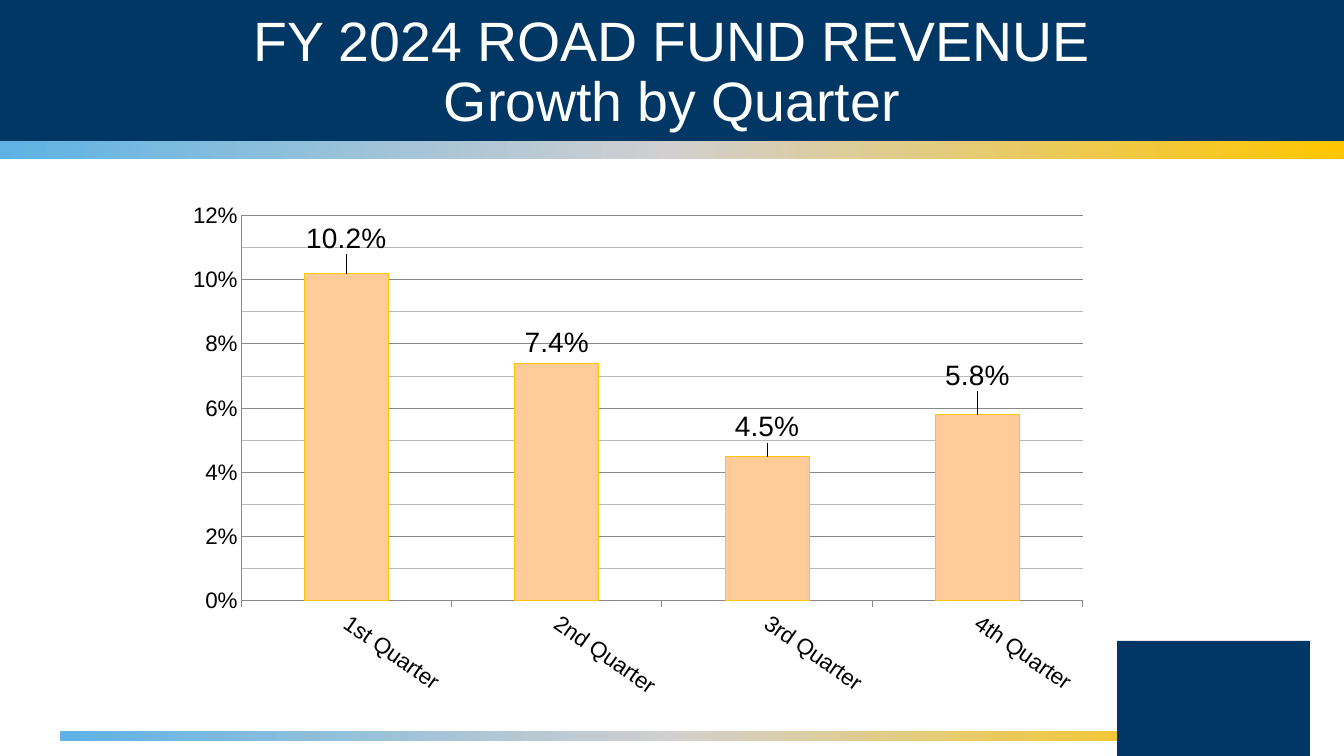
from lxml.etree import SubElement
from pptx import Presentation
from pptx.chart.data import CategoryChartData
from pptx.dml.color import RGBColor
from pptx.enum.chart import XL_CHART_TYPE, XL_LABEL_POSITION, XL_TICK_LABEL_POSITION, XL_TICK_MARK
from pptx.enum.shapes import MSO_SHAPE
from pptx.enum.text import MSO_ANCHOR, MSO_AUTO_SIZE, PP_ALIGN
from pptx.oxml import parse_xml
from pptx.oxml.ns import nsdecls, qn
from pptx.util import Pt

PX = 914400 / 100.8
COLORS = {
    "navy": "003764", "sky": "5EB3E4", "silver": "D1CFCF", "gold": "FFC600",
    "peach": "FFCC99", "white": "FFFFFF", "black": "000000",
    "major": "888888", "minor": "B9B9B9",
}


def px(*lengths):
    return [round(length * PX) for length in lengths]


def write(frame, text, size, color, font="Arial", align=PP_ALIGN.CENTER, spacing=0.9):
    paragraph = frame.paragraphs[0]
    paragraph.alignment = align
    paragraph.line_spacing = spacing
    for index, line in enumerate(text.split("\n")):
        if index:
            paragraph.add_line_break()
        run = paragraph.add_run()
        run.text = line
        run.font.name = font
        run.font.size = Pt(size)
        run.font.color.rgb = RGBColor.from_string(COLORS[color])


presentation = Presentation()
presentation.slide_width, presentation.slide_height = px(1344, 756)
slide = presentation.slides.add_slide(presentation.slide_layouts[5])

bands = [
    (0, 0, 1344, 141, False),
    (0, 141, 1344, 18, True),
    (60, 731, 1224, 10, True),
    (1117, 641, 193, 119, False),
]
for left, top, width, height, blended in bands:
    band = slide.shapes.add_shape(MSO_SHAPE.RECTANGLE, *px(left, top, width, height))
    band.shadow.inherit = False
    band.line.fill.background()
    if blended:
        stops = "".join(
            f'<a:gs pos="{position}"><a:srgbClr val="{COLORS[name]}"/></a:gs>'
            for position, name in ((0, "sky"), (50000, "silver"), (100000, "gold"))
        )
        gradient = parse_xml(
            f'<a:gradFill {nsdecls("a")}><a:gsLst>{stops}</a:gsLst><a:lin ang="0" scaled="0"/></a:gradFill>'
        )
        band.element.spPr.find(qn("a:prstGeom")).addnext(gradient)
    else:
        band.fill.solid()
        band.fill.fore_color.rgb = RGBColor.from_string(COLORS["navy"])

headline = slide.shapes.title
headline.element.getparent().append(headline.element)
headline.left, headline.top, headline.width, headline.height = px(0, 36, 1344, 75)
headline.text_frame.auto_size = MSO_AUTO_SIZE.NONE
headline.text_frame.word_wrap = True
headline.text_frame.vertical_anchor = MSO_ANCHOR.MIDDLE
write(headline.text_frame, "FY 2024 ROAD FUND REVENUE\nGrowth by Quarter", size=39.6, color="white")

growth = CategoryChartData(number_format="0.0%")
growth.categories = ["1st Quarter", "2nd Quarter", "3rd Quarter", "4th Quarter"]
growth.add_series("Series 1", (0.102, 0.074, 0.045, 0.058))
chart = slide.shapes.add_chart(XL_CHART_TYPE.COLUMN_CLUSTERED, *px(158, 163, 936, 571), growth).chart
chart.has_legend = False
chart.has_title = False
chart.font.name = "Arial"
chart.font.size = Pt(16)
chart.font.color.rgb = RGBColor.from_string(COLORS["black"])

plot_area = chart.plots[0]._element.getparent()
for layout in plot_area.findall(qn("c:layout")):
    plot_area.remove(layout)
plot_area.insert(0, parse_xml(
    f'<c:layout {nsdecls("c")}><c:manualLayout><c:layoutTarget val="inner"/>'
    '<c:xMode val="edge"/><c:yMode val="edge"/><c:x val="0.089"/><c:y val="0.092"/>'
    '<c:w val="0.899"/><c:h val="0.675"/></c:manualLayout></c:layout>'
))

quarters = chart.category_axis
quarters.tick_label_position = XL_TICK_LABEL_POSITION.LOW
quarters.major_tick_mark = XL_TICK_MARK.OUTSIDE
quarters.tick_labels.font.size = Pt(16)
quarters.tick_labels.font.name = "Arial"
quarters._element.find(qn("c:txPr")).find(qn("a:bodyPr")).set("rot", "2100000")

percents = chart.value_axis
percents.minimum_scale = 0
percents.maximum_scale = 0.12
percents.major_unit = 0.02
percents.minor_unit = 0.01
percents.has_major_gridlines = True
percents.has_minor_gridlines = True
percents.major_tick_mark = XL_TICK_MARK.NONE
percents.tick_labels.number_format = "0%"
percents.tick_labels.number_format_is_linked = False
percents.tick_labels.font.size = Pt(16)
percents.tick_labels.font.name = "Arial"

for rule in (quarters, percents, percents.major_gridlines):
    rule.format.line.color.rgb = RGBColor.from_string(COLORS["major"])
    rule.format.line.width = Pt(0.75)
percents._element.find(qn("c:minorGridlines")).append(parse_xml(
    f'<c:spPr {nsdecls("c", "a")}><a:ln w="9525"><a:solidFill>'
    f'<a:srgbClr val="{COLORS["minor"]}"/></a:solidFill></a:ln></c:spPr>'
))

columns = chart.plots[0]
columns.gap_width = 150
columns.vary_by_categories = False
revenue = columns.series[0]
revenue.format.fill.solid()
revenue.format.fill.fore_color.rgb = RGBColor.from_string(COLORS["peach"])
revenue.format.line.color.rgb = RGBColor.from_string(COLORS["gold"])
revenue.format.line.width = Pt(0.75)

labels = revenue.data_labels
labels.show_value = True
labels.number_format = "0.0%"
labels.number_format_is_linked = False
labels.position = XL_LABEL_POSITION.OUTSIDE_END
labels.font.size = Pt(20)
labels.font.name = "Arial"

for quarter, lift in ((0, -0.026), (2, -0.016), (3, -0.033)):
    label = revenue.points[quarter].data_label
    label.position = XL_LABEL_POSITION.OUTSIDE_END
    label.font.size = Pt(20)
    label.font.name = "Arial"
    index = labels._element.findall(qn("c:dLbl"))[-1].find(qn("c:idx"))
    number_format = parse_xml(f'<c:numFmt {nsdecls("c")} formatCode="0.0%" sourceLinked="0"/>')
    shift = parse_xml(f'<c:layout {nsdecls("c")}/>')
    manual = SubElement(shift, qn("c:manualLayout"))
    SubElement(manual, qn("c:x")).set("val", "0")
    SubElement(manual, qn("c:y")).set("val", str(lift))
    index.addnext(number_format)
    index.addnext(shift)

presentation.save("out.pptx")
